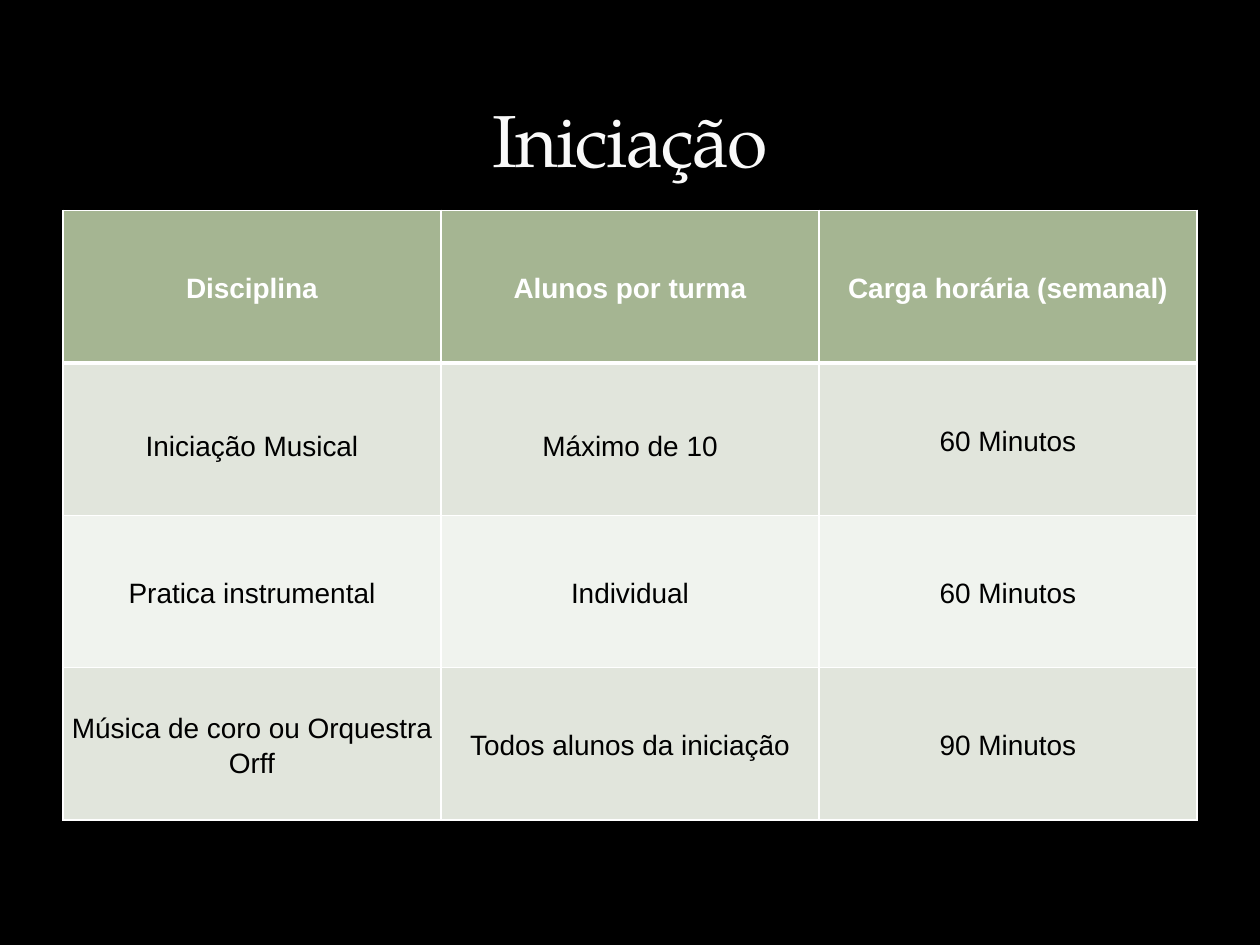
from lxml.etree import SubElement
from pptx import Presentation
from pptx.dml.color import RGBColor
from pptx.enum.text import MSO_ANCHOR, PP_ALIGN
from pptx.oxml.ns import qn
from pptx.util import Inches, Pt


def color(value):
    return RGBColor.from_string(value)


def add_border(cell, side, points):
    """Draw a white line on one side (L, R, T or B); call before filling the cell."""
    properties = cell._tc.get_or_add_tcPr()
    line = SubElement(properties, qn(f"a:ln{side}"), w=str(Pt(points)))
    fill = SubElement(line, qn("a:solidFill"))
    SubElement(fill, qn("a:srgbClr"), val="FFFFFF")


presentation = Presentation()
presentation.slide_width = Inches(10)
presentation.slide_height = Inches(7.5)
slide = presentation.slides.add_slide(presentation.slide_layouts[5])
slide.background.fill.solid()
slide.background.fill.fore_color.rgb = color("000000")

# Table
rows = [
    ["Disciplina", "Alunos por turma", "Carga horária (semanal)"],
    ["Iniciação Musical", "Máximo de 10", "60 Minutos"],
    ["Pratica instrumental", "Individual", "60 Minutos"],
    ["Música de coro ou Orquestra Orff", "Todos alunos da iniciação", "90 Minutos"],
]
row_fills = ["A5B592", "E1E5DC", "F0F3EE", "E1E5DC"]
table = slide.shapes.add_table(
    len(rows), len(rows[0]), Inches(0.5), Inches(1.67), Inches(9), Inches(4.84)
).table

for row_index, texts in enumerate(rows):
    is_header = row_index == 0
    for column_index, text in enumerate(texts):
        cell = table.cell(row_index, column_index)
        cell.margin_left = cell.margin_right = Inches(0.07)
        cell.margin_top = cell.margin_bottom = 0
        cell.vertical_anchor = MSO_ANCHOR.MIDDLE
        add_border(cell, "L", 1)
        add_border(cell, "R", 1)
        add_border(cell, "T", 3 if row_index == 1 else 1)
        add_border(cell, "B", 3 if is_header else 1)
        cell.fill.solid()
        cell.fill.fore_color.rgb = color(row_fills[row_index])

        is_loose = row_index == 1 and column_index < 2
        paragraph = cell.text_frame.paragraphs[0]
        paragraph.text = text
        paragraph.alignment = PP_ALIGN.CENTER
        paragraph.line_spacing = 1.5 if is_loose else 1.15
        paragraph.space_after = Pt(0 if is_loose or column_index == 0 else 10)
        font = paragraph.runs[0].font
        font.name = "Arial"
        font.size = Pt(16)
        font.bold = is_header
        font.color.rgb = color("FFFFFF" if is_header else "000000")

# Title
title = slide.shapes.title
title.left, title.top = Inches(0.5), Inches(0.17)
title.width, title.height = Inches(9), Inches(1.33)
title.text_frame.text = "Iniciação"
title.text_frame.vertical_anchor = MSO_ANCHOR.BOTTOM
paragraph = title.text_frame.paragraphs[0]
paragraph.alignment = PP_ALIGN.CENTER
run = paragraph.runs[0]
run.font.name = "TeX Gyre Pagella"
run.font.size = Pt(42)
run.font.color.rgb = color("F9F9F9")
run.font._element.set("spc", "-100")

presentation.save("out.pptx")
